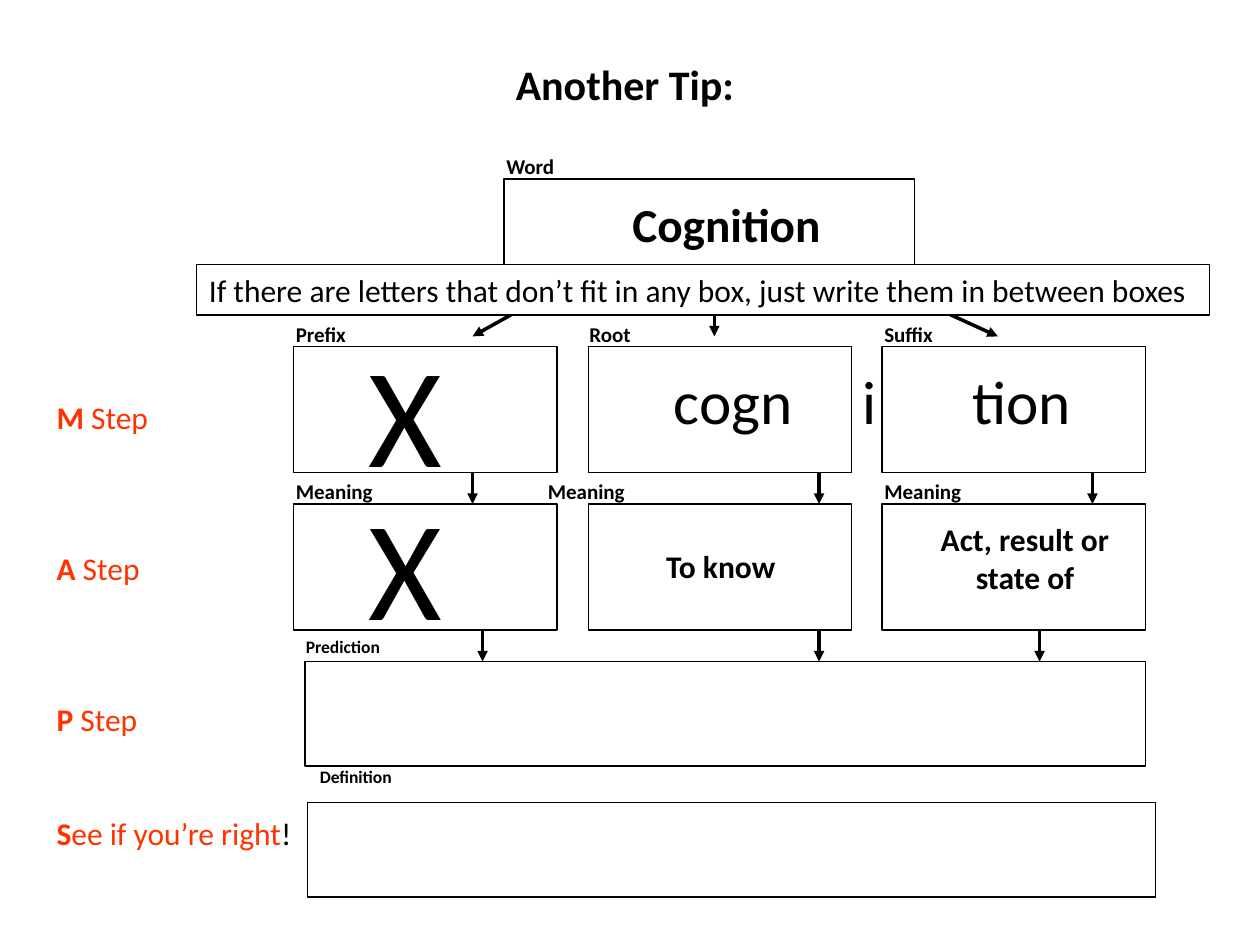
from lxml import etree
from pptx import Presentation
from pptx.dml.color import RGBColor
from pptx.enum import shapes, text
from pptx.oxml.ns import qn
from pptx.util import Inches, Pt

COLORS = {"ink": "000000", "step": "FF3300", "paper": "FFFFFF"}
FONT = "Calibri"

prs = Presentation()
prs.slide_width, prs.slide_height = Inches(10), Inches(7.5)
slide = prs.slides.add_slide(prs.slide_layouts[6])


def add_box(left, top, width, height):
    """Add an unfilled rectangle with a thin black outline."""
    box = slide.shapes.add_shape(
        shapes.MSO_SHAPE.RECTANGLE,
        Inches(left), Inches(top), Inches(width), Inches(height))
    box.shadow.inherit = False
    box.fill.background()
    box.line.color.rgb = RGBColor.from_string(COLORS["ink"])
    box.line.width = Pt(0.75)
    return box


def add_text(left, top, width, height, lines, size, bold=False,
             align=text.PP_ALIGN.LEFT, wrap=False, shape=None):
    """Write lines of (words, color) runs in a shape, or in a new text box."""
    shape = shape or slide.shapes.add_textbox(
        Inches(left), Inches(top), Inches(width), Inches(height))
    frame = shape.text_frame
    frame.word_wrap = wrap
    frame.vertical_anchor = text.MSO_ANCHOR.TOP
    frame.text = "\n".join(lines)
    for paragraph in frame.paragraphs:
        paragraph.alignment = align
        for run in paragraph.runs:
            run.font.name = FONT
            run.font.size = Pt(size)
            run.font.bold = bold
            run.font.color.rgb = RGBColor.from_string(COLORS["ink"])
    return frame


title = add_text(0.75, 0.25, 8.42, 0.83, ["Another Tip:"], 24, True,
                 text.PP_ALIGN.CENTER, wrap=True)
title.vertical_anchor = text.MSO_ANCHOR.MIDDLE

# Word, then prefix / root / suffix with their meanings, then the answers
add_box(4, 1.42, 3.26, 0.83)
for row_top in (2.75, 4):
    for column_left in (2.33, 4.67, 7):
        add_box(column_left, row_top, 2.09, 1)
add_box(2.42, 5.25, 6.67, 0.83)
add_box(2.44, 6.37, 6.73, 0.75)

for label, left, top, size in (
    ("Word", 3.92, 1.17, 12),
    ("Prefix", 2.25, 2.5, 12),
    ("Root", 4.58, 2.5, 12),
    ("Suffix", 6.92, 2.5, 12),
    ("Meaning", 2.25, 3.75, 12),
    ("Meaning", 4.25, 3.75, 12),
    ("Meaning", 6.92, 3.75, 12),
    ("Prediction", 2.33, 5, 10),
    ("Definition", 2.44, 6.03, 10),
):
    add_text(left, top, 1, 0.33, [label], size, bold=True, wrap=True)

# Steps: the initial is bold, and a closing "!" stays black
for initial, rest, ending, top in (
    ("M", " Step", "", 3.11),
    ("A", " Step", "", 4.31),
    ("P", " Step", "", 5.51),
    ("S", "ee if you’re right", "!", 6.41),
):
    step = add_text(0.35, top, 2.09, 0.4, [initial], 18, bold=True, wrap=True)
    step.paragraphs[0].runs[0].font.color.rgb = RGBColor.from_string(COLORS["step"])
    for words, color in ((rest, "step"), (ending, "ink")):
        if words:
            run = step.paragraphs[0].add_run()
            run.text = words
            run.font.name, run.font.size, run.font.bold = FONT, Pt(18), False
            run.font.color.rgb = RGBColor.from_string(COLORS[color])

for start_x, start_y, end_x, end_y in (
    (4.5, 2.25, 3.75, 2.67), (5.67, 2.25, 5.67, 2.67), (7, 2.25, 7.92, 2.67),
    *((x, 3.75, x, 4) for x in (3.75, 6.5, 8.67)),
    *((x, 5, x, 5.25) for x in (3.83, 6.5, 8.25)),
):
    arrow = slide.shapes.add_connector(
        shapes.MSO_CONNECTOR.STRAIGHT,
        Inches(start_x), Inches(start_y), Inches(end_x), Inches(end_y))
    arrow.line.color.rgb = RGBColor.from_string(COLORS["ink"])
    arrow.line.width = Pt(2)
    etree.SubElement(arrow.line._get_or_add_ln(), qn("a:tailEnd"), type="triangle")
    etree.SubElement(arrow._element.spPr, qn("a:effectLst"))

# The tip covers the start of the upper arrows
tip_area = (1.56, 2.1, 8.04, 0.4)
tip = add_box(*tip_area)
tip.fill.solid()
tip.fill.fore_color.rgb = RGBColor.from_string(COLORS["paper"])
add_text(*tip_area, ["If there are letters that don’t fit in any box, "
                     "just write them in between boxes"], 18, shape=tip)

add_text(4.92, 1.5, 1.71, 0.56, ["Cognition"], 27, bold=True)
for part, left, width in (("cogn", 5.25, 1.15), ("i", 6.75, 0.31), ("tion", 7.62, 0.99)):
    add_text(left, 2.83, width, 0.69, [part], 35)
add_text(5.18, 4.29, 1.08, 0.4, ["To know"], 18, True, text.PP_ALIGN.CENTER)
add_text(7.36, 4.08, 1.55, 0.71, ["Act, result or", "state of"], 18, True,
         text.PP_ALIGN.CENTER)
for top in (2.54, 3.75):
    add_text(2.83, top, 1.22, 1.46, ["X"], 81, wrap=True)

prs.save("out.pptx")
